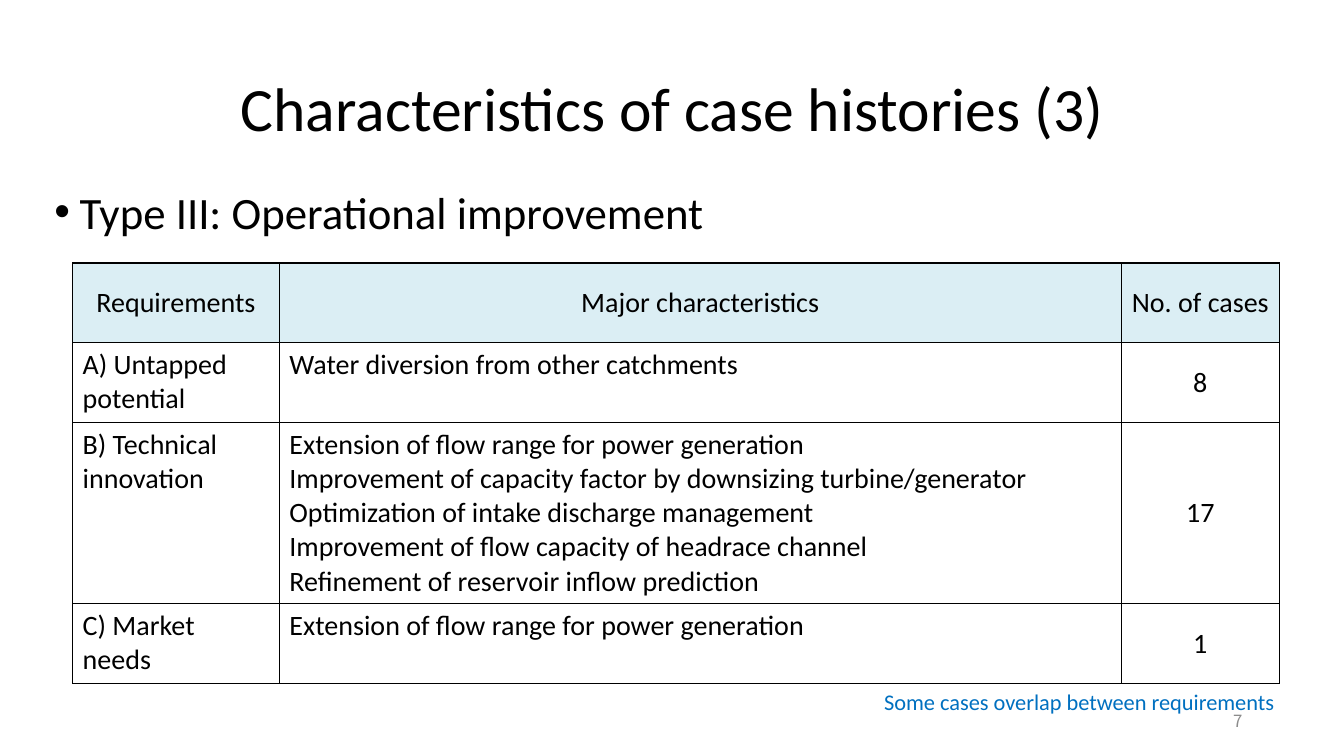
"""Build the slide on operational improvement case histories."""
from dataclasses import dataclass

from lxml.etree import SubElement
from pptx import Presentation
from pptx.dml.color import RGBColor
from pptx.enum.text import MSO_ANCHOR as Anchor, MSO_AUTO_SIZE as AutoSize, PP_ALIGN as Align
from pptx.oxml.ns import qn
from pptx.util import Emu, Pt

EMU_PER_PX = 9144


@dataclass(frozen=True)
class Theme:
    """Colours, fonts and type sizes of the deck."""
    font: str = "Calibri"
    number_font: str = "Noto Sans CJK JP"
    ink: str = "000000"
    header_fill: str = "DBEEF4"
    note_ink: str = "0070C0"
    number_ink: str = "8C8C8C"
    title_size: int = 44
    body_size: int = 32
    table_size: int = 20
    note_size: int = 16
    number_size: int = 12


THEME = Theme()
COLUMN_WIDTHS = (205, 835, 157)
ROW_HEIGHTS = (79, 79, 180, 79)
ROWS = (
    ("Requirements", "Major characteristics", "No. of cases"),
    ("A) Untapped potential", "Water diversion from other catchments", "8"),
    ("B) Technical innovation",
     "Extension of flow range for power generation\n"
     "Improvement of capacity factor by downsizing turbine/generator\n"
     "Optimization of intake discharge management\n"
     "Improvement of flow capacity of headrace channel\n"
     "Refinement of reservoir inflow prediction", "17"),
    ("C) Market needs", "Extension of flow range for power generation", "1"),
)


def px(length):
    """Turn a length in px into EMU."""
    return Emu(length * EMU_PER_PX)


def place(shape, box):
    """Move and size a shape to the given box."""
    shape.left, shape.top, shape.width, shape.height = map(px, box)


def write(frame, text, size, color=THEME.ink, align=Align.LEFT, font=THEME.font):
    """Fill a text frame and format all its runs."""
    frame.text = text
    for para in frame.paragraphs:
        para.alignment = align
        for run in para.runs:
            run.font.size = Pt(size)
            run.font.name = font
            run.font.color.rgb = RGBColor.from_string(color)


def add_title(page, box, text):
    """Fill the title placeholder."""
    title = page.shapes.title
    place(title, box)
    frame = title.text_frame
    write(frame, text, THEME.title_size, align=Align.CENTER)
    frame.vertical_anchor = Anchor.MIDDLE
    frame.auto_size = AutoSize.NONE
    frame.paragraphs[0].line_spacing = 0.9


def add_body(page, box, text):
    """Fill the body placeholder with one bulleted line."""
    body = page.placeholders[1]
    place(body, box)
    frame = body.text_frame
    write(frame, text, THEME.body_size)
    frame.auto_size = AutoSize.NONE
    para = frame.paragraphs[0]
    para.space_before = Pt(6)
    properties = para._p.get_or_add_pPr()
    properties.set("marL", str(px(25)))
    properties.set("indent", str(px(-25)))
    SubElement(properties, qn("a:buFont"), typeface="Arial")
    SubElement(properties, qn("a:buChar"), char="•")


def add_borders(cell):
    """Draw a thin line on each side of a table cell."""
    properties = cell._tc.get_or_add_tcPr()
    for side in ("lnL", "lnR", "lnT", "lnB"):
        line = SubElement(properties, qn(f"a:{side}"), w=str(Pt(1)))
        fill = SubElement(line, qn("a:solidFill"))
        SubElement(fill, qn("a:srgbClr"), val=THEME.ink)


def add_case_table(page, box, rows):
    """Add the table of requirements, characteristics and case counts."""
    frame = page.shapes.add_table(len(rows), len(COLUMN_WIDTHS), *map(px, box))
    table = frame.table
    table.first_row = table.horz_banding = False
    for column, width in zip(table.columns, COLUMN_WIDTHS):
        column.width = px(width)
    for row, height, texts in zip(table.rows, ROW_HEIGHTS, rows):
        row.height = px(height)
        is_header = texts is rows[0]
        for index, (cell, text) in enumerate(zip(row.cells, texts)):
            centred = is_header or index == len(texts) - 1
            write(cell.text_frame, text, THEME.table_size,
                  align=Align.CENTER if centred else Align.LEFT)
            cell.vertical_anchor = Anchor.MIDDLE if centred else Anchor.TOP
            add_borders(cell)
            if is_header:
                cell.fill.solid()
                cell.fill.fore_color.rgb = RGBColor.from_string(THEME.header_fill)
            else:
                cell.fill.background()


def add_label(page, box, text, size, color, anchor=Anchor.TOP, **style):
    """Add a small line of text."""
    label = page.shapes.add_textbox(*map(px, box))
    frame = label.text_frame
    frame.word_wrap = True
    frame.vertical_anchor = anchor
    write(frame, text, size, color, **style)


def main():
    """Build and save the deck."""
    deck = Presentation()
    deck.slide_width, deck.slide_height = px(1333), px(750)
    page = deck.slides.add_slide(deck.slide_layouts[1])
    add_title(page, (92, 40, 1150, 142), "Characteristics of case histories (3)")
    add_case_table(page, (72, 261, sum(COLUMN_WIDTHS), sum(ROW_HEIGHTS)), ROWS)
    add_label(page, (942, 695, 300, 40), "7", THEME.number_size, THEME.number_ink,
              Anchor.MIDDLE, align=Align.RIGHT, font=THEME.number_font)
    add_body(page, (44, 178, 1246, 72), "Type III: Operational improvement")
    add_label(page, (867, 678, 417, 39), "Some cases overlap between requirements",
              THEME.note_size, THEME.note_ink)
    deck.save("out.pptx")


if __name__ == "__main__":
    main()
